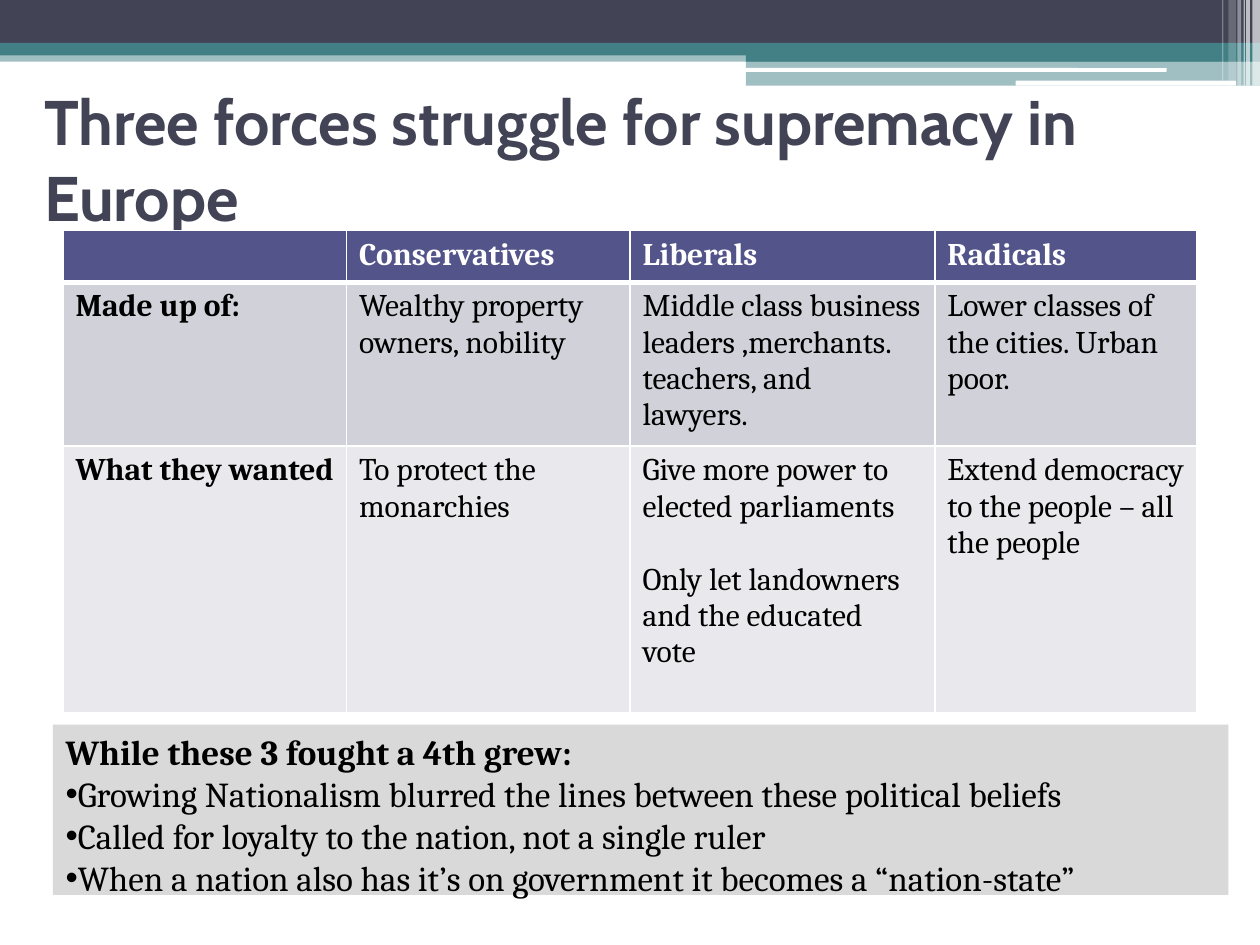
"""Build a slide comparing three political forces in nineteenth-century Europe."""
from dataclasses import dataclass
from typing import Any, Optional

from lxml.etree import SubElement
from pptx import Presentation
from pptx.dml.color import RGBColor
from pptx.enum.shapes import MSO_SHAPE as Preset
from pptx.enum.text import MSO_ANCHOR as Anchor, MSO_AUTO_SIZE as AutoSize, PP_ALIGN as Align
from pptx.oxml import parse_xml
from pptx.oxml.ns import nsdecls, qn
from pptx.util import Inches, Pt


@dataclass(frozen=True)
class Theme:
    """Colours, fonts and type sizes of the slide."""
    navy: str = "424456"
    teal: str = "438086"
    white: str = "FFFFFF"
    black: str = "000000"
    header: str = "53548A"
    row_fills: tuple = ("D1D1DA", "E9E9ED")
    panel: str = "D9D9D9"
    heading_font: str = "Cabin"
    text_font: str = "Cambria"
    title_size: int = 36
    table_size: int = 18
    list_size: int = 20


@dataclass(frozen=True)
class Band:
    """A decorative bar, with opacity in percent."""
    left: float
    top: float
    width: float
    height: float
    color: str
    opacity: int = 100
    preset: Any = Preset.RECTANGLE


@dataclass(frozen=True)
class Force:
    """One political group with its members and aims."""
    name: str
    members: str
    aims: tuple


THEME = Theme()
BANDS = (
    Band(0, 0.4, 10, 0.09, THEME.teal, 50),
    Band(0, 0, 10, 0.34, THEME.navy),
    Band(0, 0.34, 10, 0.1, THEME.teal),
    Band(5.92, 0.39, 4.08, 0.1, THEME.teal),
    Band(5.92, 0.48, 4.08, 0.2, THEME.teal, 50),
    Band(5.91, 0.54, 3.35, 0.03, THEME.white, preset=Preset.ROUNDED_RECTANGLE),
    Band(8.06, 0.64, 1.75, 0.04, THEME.white, preset=Preset.ROUNDED_RECTANGLE),
    *(Band(left, 0, width, height, THEME.white, opacity)
      for left, width, height, opacity in (
          (9.94, 0.06, 0.68, 65), (9.89, 0.03, 0.68, 65), (9.87, 0.01, 0.68, 60),
          (9.82, 0.03, 0.68, 40), (9.75, 0.06, 0.64, 20), (9.7, 0.01, 0.64, 30))),
)
FORCES = (
    Force("Conservatives", "Wealthy property owners, nobility", ("To protect the monarchies",)),
    Force("Liberals", "Middle class business leaders ,merchants. teachers, and lawyers.",
          ("Give more power to elected parliaments", "Only let landowners and the educated vote")),
    Force("Radicals", "Lower classes of the cities. Urban poor.",
          ("Extend democracy to the people – all the people",)),
)
COLUMN_WIDTHS = (2.25, 2.25, 2.42, 2.08)
ROW_HEIGHTS = (0.41, 1.25, 2.12)
NATIONALISM = (
    "While these 3 fought a 4th grew:",
    "Growing Nationalism blurred the lines between these political beliefs",
    "Called for loyalty to the nation, not a single ruler",
    "When a nation also has it’s on government it becomes a “nation-state”",
)


def apply_format(target: Any, values: dict) -> None:
    """Set each named attribute on the target."""
    for name, value in values.items():
        setattr(target, name, value)


def place(shape: Any, left: float, top: float, width: float, height: float) -> None:
    """Position a shape in inches."""
    apply_format(shape, {"left": Inches(left), "top": Inches(top),
                         "width": Inches(width), "height": Inches(height)})


def paint(fill: Any, color: str) -> None:
    """Give a fill one solid colour."""
    fill.solid()
    fill.fore_color.rgb = RGBColor.from_string(color)


def write(frame: Any, lines: tuple, font: str, size: int, color: str,
          bold_lines: int = 0, gap: Optional[float] = 0) -> None:
    """Write lines as paragraphs, the first ones bold, with a gap between them."""
    frame.text = "\n".join(lines)
    for index, paragraph in enumerate(frame.paragraphs):
        apply_format(paragraph, {"alignment": Align.LEFT,
                                 "space_before": Pt(gap if index else 0)})
        for run in paragraph.runs:
            apply_format(run.font, {"name": font, "size": Pt(size),
                                    "bold": index < bold_lines})
            run.font.color.rgb = RGBColor.from_string(color)


def draw_band(slide: Any, band: Band) -> None:
    """Draw one decorative bar."""
    bar = slide.shapes.add_shape(band.preset, Inches(band.left), Inches(band.top),
                                 Inches(band.width), Inches(band.height))
    bar.shadow.inherit = False
    bar.line.fill.background()
    paint(bar.fill, band.color)
    if band.opacity < 100:
        color = bar.fill._xPr.find(f".//{qn('a:srgbClr')}")
        SubElement(color, qn("a:alpha"), val=str(band.opacity * 1000))


def border_cell(cell: Any, bottom: float) -> None:
    """Give a cell white borders, with its own bottom width in points."""
    properties = cell._tc.get_or_add_tcPr()
    edges = {"L": 1, "R": 1, "T": 1, "B": bottom}
    for index, (edge, width) in enumerate(edges.items()):
        properties.insert(index, parse_xml(
            f'<a:ln{edge} {nsdecls("a")} w="{Pt(width)}"><a:solidFill>'
            f'<a:srgbClr val="{THEME.white}"/></a:solidFill></a:ln{edge}>'))


def draw_forces(slide: Any) -> None:
    """Draw the table that compares the forces."""
    rows = (
        (("",), *((force.name,) for force in FORCES)),
        (("Made up of:",), *((force.members,) for force in FORCES)),
        (("What they wanted",), *(force.aims for force in FORCES)),
    )
    table = slide.shapes.add_table(len(rows), len(COLUMN_WIDTHS), Inches(0.5), Inches(1.83),
                                   Inches(sum(COLUMN_WIDTHS)), Inches(sum(ROW_HEIGHTS))).table
    for column, width in zip(table.columns, COLUMN_WIDTHS):
        column.width = Inches(width)
    for row, height in zip(table.rows, ROW_HEIGHTS):
        row.height = Inches(height)
    for row_index, row in enumerate(rows):
        heading = row_index == 0
        for column_index, lines in enumerate(row):
            cell = table.cell(row_index, column_index)
            write(cell.text_frame, lines, THEME.text_font, THEME.table_size,
                  THEME.white if heading else THEME.black,
                  bold_lines=int(heading or column_index == 0), gap=21)
            paint(cell.fill, THEME.header if heading else THEME.row_fills[row_index - 1])
            border_cell(cell, 3 if heading else 1)


def fill_title(title: Any) -> None:
    """Write and format the slide title."""
    place(title, 0.25, 0.67, 9.5, 1.17)
    write(title.text_frame, ("Three forces struggle for supremacy in Europe",),
          THEME.heading_font, THEME.title_size, THEME.navy, bold_lines=1)
    apply_format(title.text_frame, {"vertical_anchor": Anchor.MIDDLE,
                                    "auto_size": AutoSize.NONE, "word_wrap": True})


def fill_nationalism(panel: Any) -> None:
    """Write the shaded list about nationalism."""
    place(panel, 0.42, 5.75, 9.33, 1.45)
    paint(panel.fill, THEME.panel)
    write(panel.text_frame, NATIONALISM, THEME.text_font, THEME.list_size, THEME.black,
          bold_lines=1)
    apply_format(panel.text_frame, {"vertical_anchor": Anchor.TOP, "word_wrap": True,
                                    "auto_size": AutoSize.SHAPE_TO_FIT_TEXT})
    for index, paragraph in enumerate(panel.text_frame.paragraphs):
        properties = paragraph._p.get_or_add_pPr()
        properties.set("marL", "0")
        properties.set("indent", "0")
        if index:
            SubElement(properties, qn("a:buFont"), typeface="Arial")
            SubElement(properties, qn("a:buChar"), char="•")
        else:
            SubElement(properties, qn("a:buNone"))


def main() -> None:
    """Build and save the slide."""
    deck = Presentation()
    apply_format(deck, {"slide_width": Inches(10), "slide_height": Inches(7.5)})
    slide = deck.slides.add_slide(deck.slide_layouts[1])
    for band in BANDS:
        draw_band(slide, band)
    fill_title(slide.shapes.title)
    draw_forces(slide)
    fill_nationalism(slide.placeholders[1])
    deck.save("out.pptx")


if __name__ == "__main__":
    main()
